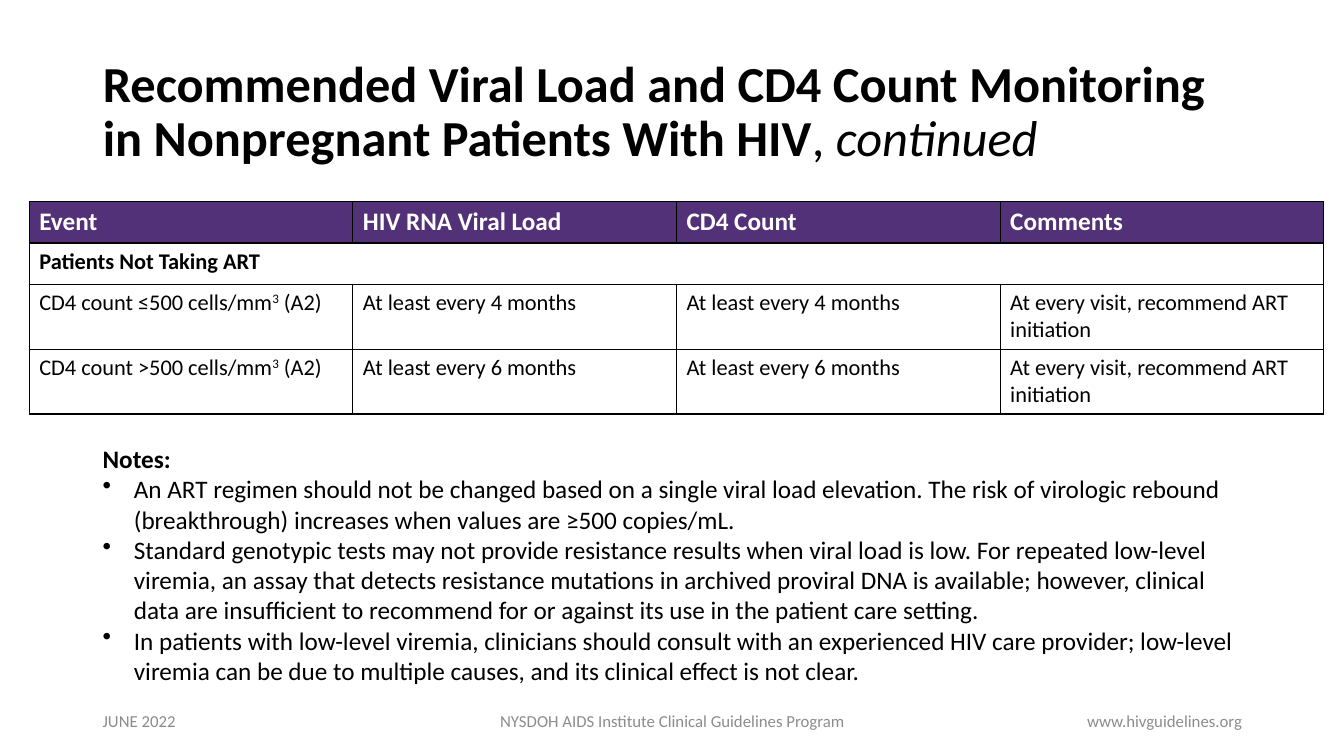
from lxml import etree
from pptx import Presentation
from pptx import util as u
from pptx.dml.color import RGBColor
from pptx.enum import text
from pptx.oxml import ns

BLACK = RGBColor(0x00, 0x00, 0x00)
WHITE = RGBColor(0xFF, 0xFF, 0xFF)
PURPLE = RGBColor(0x52, 0x31, 0x78)
GRAY = RGBColor(0x8C, 0x8C, 0x8C)
LEFT, CENTER, RIGHT = text.PP_ALIGN.LEFT, text.PP_ALIGN.CENTER, text.PP_ALIGN.RIGHT
MARGIN, CONTENT_WIDTH = 0.92, 11.5


class SlideBuilder:
    font_name = "Calibri"

    def __init__(self, presentation):
        self.slide = presentation.slides.add_slide(presentation.slide_layouts[5])

    def style(self, paragraph, size, color=BLACK, bold=False, align=LEFT):
        paragraph.alignment = align
        font = paragraph.font
        font.name, font.size, font.bold = self.font_name, u.Pt(size), bold
        font.color.rgb = color

    def title(self, lines, suffix):
        shape = self.slide.shapes.title
        shape.left, shape.top = u.Inches(MARGIN), u.Inches(0.4)
        shape.width, shape.height = u.Inches(CONTENT_WIDTH), u.Inches(1.45)
        frame = shape.text_frame
        frame.auto_size = text.MSO_AUTO_SIZE.NONE
        frame.vertical_anchor = text.MSO_ANCHOR.MIDDLE
        paragraph = frame.paragraphs[0]
        paragraph.line_spacing = 0.9
        self.style(paragraph, 36)
        for index, line in enumerate(lines):
            if index:
                paragraph.add_line_break()
            run = paragraph.add_run()
            run.text, run.font.bold = line, True
        paragraph.add_run().text = ", "
        run = paragraph.add_run()
        run.text, run.font.italic = suffix, True

    def text_box(self, left, top, width, height):
        shape = self.slide.shapes.add_textbox(*map(u.Inches, (left, top, width, height)))
        shape.text_frame.word_wrap = True
        return shape.text_frame

    def footer(self, content, left, width, align):
        frame = self.text_box(left, 6.95, width, 0.4)
        frame.vertical_anchor = text.MSO_ANCHOR.MIDDLE
        paragraph = frame.paragraphs[0]
        paragraph.text = content
        self.style(paragraph, 12, GRAY, align=align)

    def notes(self, heading, items):
        frame = self.text_box(MARGIN, 4.35, CONTENT_WIDTH, 2.52)
        frame.paragraphs[0].text = heading
        self.style(frame.paragraphs[0], 18, bold=True)
        for item in items:
            paragraph = frame.add_paragraph()
            paragraph.text = item
            properties = paragraph._p.get_or_add_pPr()
            properties.set("marL", str(u.Inches(0.31)))
            properties.set("indent", str(-u.Inches(0.31)))
            bullet = etree.SubElement(properties, ns.qn("a:buChar"))
            bullet.set("char", "•")
            self.style(paragraph, 18)

    def cell(self, cell, content, size=16, color=BLACK, bold=False, fill=None):
        # Text between carets is superscript
        paragraph = cell.text_frame.paragraphs[0]
        for index, part in enumerate(content.split("^")):
            run = paragraph.add_run()
            run.text = part
            if index % 2:
                run._r.get_or_add_rPr().set("baseline", "30000")
        self.style(paragraph, size, color, bold)
        self.borders(cell)
        if fill is None:
            cell.fill.background()
        else:
            cell.fill.solid()
            cell.fill.fore_color.rgb = fill

    def borders(self, cell):
        properties = cell._tc.get_or_add_tcPr()
        for side in ("lnL", "lnR", "lnT", "lnB"):
            line = etree.SubElement(properties, ns.qn(f"a:{side}"), w=str(u.Pt(1)))
            fill = etree.SubElement(line, ns.qn("a:solidFill"))
            etree.SubElement(fill, ns.qn("a:srgbClr"), val=str(BLACK))

    def table(self, header, section, rows):
        heights = [0.41, 0.41] + [0.64] * len(rows)
        frame = self.slide.shapes.add_table(
            len(heights), len(header), u.Inches(0.29), u.Inches(2),
            u.Inches(3.21 * len(header)), u.Inches(sum(heights)))
        table = frame.table
        table.first_row = table.horz_banding = False
        for row, height in zip(table.rows, heights):
            row.height = u.Inches(height)
        for column, label in enumerate(header):
            self.cell(table.cell(0, column), label, 18, WHITE, True, PURPLE)
            self.cell(table.cell(1, column), "" if column else section, bold=True)
        table.cell(1, 0).merge(table.cell(1, len(header) - 1))
        for row, values in enumerate(rows, start=2):
            for column, value in enumerate(values):
                self.cell(table.cell(row, column), value)


def main():
    presentation = Presentation()
    presentation.slide_width = u.Inches(13.33)
    presentation.slide_height = u.Inches(7.5)
    builder = SlideBuilder(presentation)

    # Title
    builder.title(["Recommended Viral Load and CD4 Count Monitoring ",
                   "in Nonpregnant Patients With HIV"], "continued")

    # Monitoring table
    comment = "At every visit, recommend ART initiation"
    rows = []
    for sign, months in (("≤", 4), (">", 6)):
        interval = f"At least every {months} months"
        rows.append([f"CD4 count {sign}500 cells/mm^3^ (A2)", interval, interval, comment])
    builder.table(["Event", "HIV RNA Viral Load", "CD4 Count", "Comments"],
                  "Patients Not Taking ART", rows)

    # Notes
    builder.notes("Notes:", [
        "An ART regimen should not be changed based on a single viral load elevation. "
        "The risk of virologic rebound (breakthrough) increases when values are "
        "≥500 copies/mL.",
        "Standard genotypic tests may not provide resistance results when viral load is "
        "low. For repeated low-level viremia, an assay that detects resistance mutations "
        "in archived proviral DNA is available; however, clinical data are insufficient "
        "to recommend for or against its use in the patient care setting.",
        "In patients with low-level viremia, clinicians should consult with an "
        "experienced HIV care provider; low-level viremia can be due to multiple causes, "
        "and its clinical effect is not clear.",
    ])

    # Footer
    builder.footer("JUNE 2022", MARGIN, 3, LEFT)
    builder.footer("NYSDOH AIDS Institute Clinical Guidelines Program", 4.42, 4.5, CENTER)
    builder.footer("www.hivguidelines.org", MARGIN + CONTENT_WIDTH - 3, 3, RIGHT)

    presentation.save("out.pptx")


if __name__ == "__main__":
    main()
